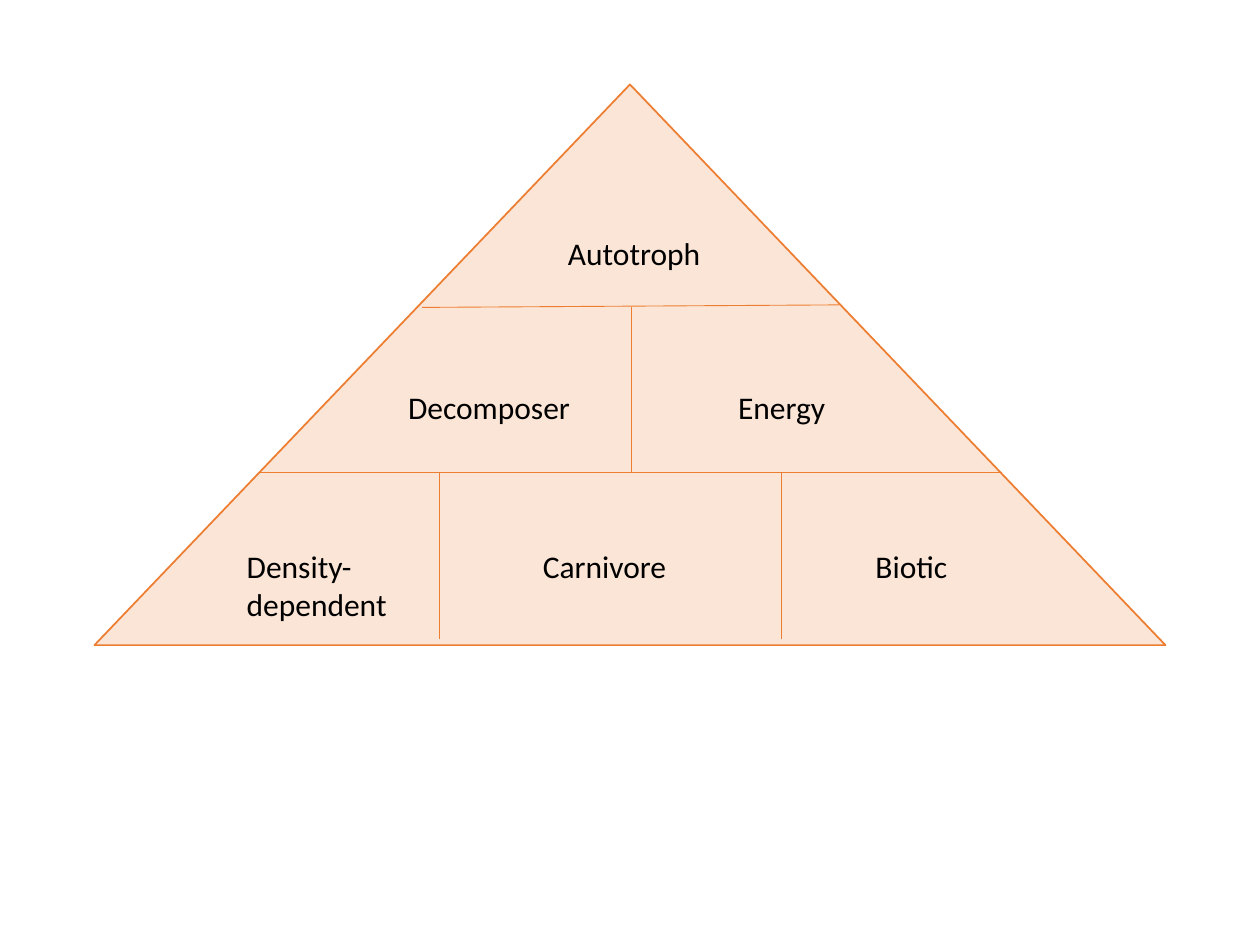
"""Build a three-tier ecology vocabulary pyramid on one slide."""
from dataclasses import dataclass

from lxml.etree import SubElement
from pptx import Presentation
from pptx.dml.color import RGBColor
from pptx.enum.shapes import MSO_CONNECTOR, MSO_SHAPE
from pptx.enum.text import MSO_AUTO_SIZE
from pptx.oxml.ns import qn
from pptx.util import Pt

EMU_PER_PX = 9144
SLIDE_SIZE = (1000, 750)
PYRAMID = (75, 67, 850, 445)
LINE_HEIGHT = 30
LABEL_PADDING = 10

TIERS = [
    {"label_top": 181, "terms": [("Autotroph", 441, 147, 1)],
     "floor": ((335, 244), (666, 242))},
    {"label_top": 303, "terms": [("Decomposer", 314, 152, 1), ("Energy", 576, 177, 1)],
     "floor": ((206, 375), (795, 375)), "walls": (501,), "wall_span": (244, 375)},
    {"label_top": 429, "terms": [("Density-dependent", 186, 174, 2),
                                 ("Carnivore", 421, 160, 1), ("Biotic", 685, 110, 1)],
     "walls": (349, 620), "wall_span": (375, 507)},
]


@dataclass(frozen=True)
class Theme:
    fill: RGBColor = RGBColor(0xFB, 0xE5, 0xD6)
    line: RGBColor = RGBColor(0xED, 0x7D, 0x31)
    text: RGBColor = RGBColor(0, 0, 0)
    font: str = "Calibri"
    text_size: Pt = Pt(18)
    outline_width: Pt = Pt(1)
    divider_width: Pt = Pt(0.5)


THEME = Theme()


def px(*lengths):
    return [length * EMU_PER_PX for length in lengths]


def draw_pyramid(slide):
    pyramid = slide.shapes.add_shape(MSO_SHAPE.ISOSCELES_TRIANGLE, *px(*PYRAMID))
    pyramid.shadow.inherit = False
    pyramid.fill.solid()
    pyramid.fill.fore_color.rgb = THEME.fill
    pyramid.line.color.rgb = THEME.line
    pyramid.line.width = THEME.outline_width


def draw_divider(slide, start, end):
    divider = slide.shapes.add_connector(MSO_CONNECTOR.STRAIGHT, *px(*start, *end))
    divider.line.color.rgb = THEME.line
    divider.line.width = THEME.divider_width
    SubElement(divider._element.spPr, qn("a:effectLst"))


def draw_term(slide, term, left, top, width, line_count):
    height = line_count * LINE_HEIGHT + LABEL_PADDING
    label = slide.shapes.add_textbox(*px(left, top, width, height))
    frame = label.text_frame
    frame.word_wrap = True
    frame.auto_size = MSO_AUTO_SIZE.SHAPE_TO_FIT_TEXT
    frame.text = term
    font = frame.paragraphs[0].runs[0].font
    font.name = THEME.font
    font.size = THEME.text_size
    font.color.rgb = THEME.text


def draw_tier(slide, tier):
    for term, left, width, line_count in tier["terms"]:
        draw_term(slide, term, left, tier["label_top"], width, line_count)
    if "floor" in tier:
        draw_divider(slide, *tier["floor"])
    for x in tier.get("walls", ()):
        top, bottom = tier["wall_span"]
        draw_divider(slide, (x, top), (x, bottom))


def main():
    presentation = Presentation()
    presentation.slide_width, presentation.slide_height = px(*SLIDE_SIZE)
    slide = presentation.slides.add_slide(presentation.slide_layouts[6])
    draw_pyramid(slide)
    for tier in TIERS:
        draw_tier(slide, tier)
    presentation.save("out.pptx")


if __name__ == "__main__":
    main()
